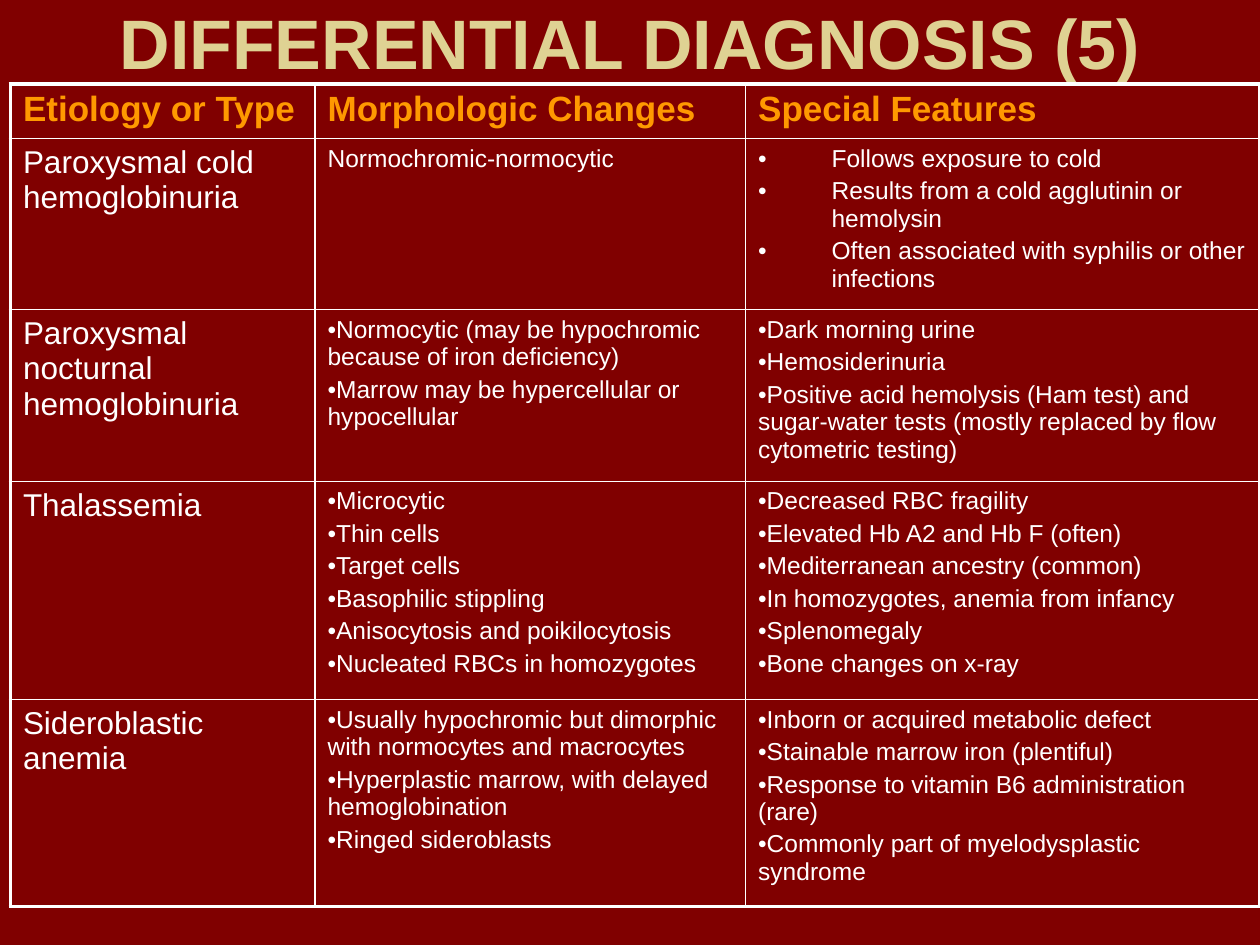
"""Build the differential diagnosis slide with its table of anemia types."""
from dataclasses import dataclass

from lxml.etree import SubElement
from pptx import Presentation
from pptx.dml.color import RGBColor as Color
from pptx.enum.text import MSO_ANCHOR as Anchor, PP_ALIGN as Align
from pptx.oxml import parse_xml
from pptx.oxml.ns import nsdecls, qn
from pptx.util import Cm, Pt


@dataclass(frozen=True)
class Theme:
    """Hold the colours, font, type sizes and line widths."""
    background: str = "800000"
    title: str = "DFD293"
    header: str = "FF9900"
    body: str = "FFFFFF"
    font: str = "Arial"
    title_size: int = 40
    header_size: int = 20
    type_size: int = 18
    detail_size: int = 14
    inner_line: float = 1
    outer_line: float = 2.25


THEME = Theme()
TITLE = "DIFFERENTIAL DIAGNOSIS (5)"
HEADERS = ["Etiology or Type", "Morphologic Changes", "Special Features"]
COLUMN_WIDTHS = [6.14, 8.68, 10.37]
ROW_HEIGHTS = [1.09, 3.45, 3.46, 4.4, 4.17]
HANGING_INDENT = 1.48
DISEASES = [
    ("Paroxysmal cold hemoglobinuria",
     ["Normochromic-normocytic"],
     ["Follows exposure to cold",
      "Results from a cold agglutinin or hemolysin",
      "Often associated with syphilis or other infections"]),
    ("Paroxysmal nocturnal hemoglobinuria",
     ["Normocytic (may be hypochromic because of iron deficiency)",
      "Marrow may be hypercellular or hypocellular"],
     ["Dark morning urine",
      "Hemosiderinuria",
      "Positive acid hemolysis (Ham test) and sugar-water tests "
      "(mostly replaced by flow cytometric testing)"]),
    ("Thalassemia",
     ["Microcytic", "Thin cells", "Target cells", "Basophilic stippling",
      "Anisocytosis and poikilocytosis", "Nucleated RBCs in homozygotes"],
     ["Decreased RBC fragility",
      "Elevated Hb A2 and Hb F (often)",
      "Mediterranean ancestry (common)",
      "In homozygotes, anemia from infancy",
      "Splenomegaly",
      "Bone changes on x-ray"]),
    ("Sideroblastic anemia",
     ["Usually hypochromic but dimorphic with normocytes and macrocytes",
      "Hyperplastic marrow, with delayed hemoglobination",
      "Ringed sideroblasts"],
     ["Inborn or acquired metabolic defect",
      "Stainable marrow iron (plentiful)",
      "Response to vitamin B6 administration (rare)",
      "Commonly part of myelodysplastic syndrome"]),
]


def format_runs(para, size, color, bold=False):
    """Apply the theme font to every run of a paragraph."""
    for span in para.runs:
        span.font.name = THEME.font
        span.font.size = Pt(size)
        span.font.bold = bold
        span.font.color.rgb = Color.from_string(color)


def add_title(page):
    """Add the centred slide title."""
    box = page.shapes.add_textbox(Cm(1.27), Cm(0), Cm(22.86), Cm(1.67))
    frame = box.text_frame
    frame.word_wrap = True
    frame.vertical_anchor = Anchor.MIDDLE
    frame.text = TITLE
    para = frame.paragraphs[0]
    para.alignment = Align.CENTER
    format_runs(para, THEME.title_size, THEME.title, bold=True)


def add_bullet(para, indent):
    """Give a paragraph a bullet in the theme font with a hanging indent."""
    properties = para._p.get_or_add_pPr()
    properties.set("marL", str(Cm(indent)))
    properties.set("indent", str(-Cm(indent)))
    SubElement(properties, qn("a:buFont")).set("typeface", THEME.font)
    SubElement(properties, qn("a:buChar")).set("char", "•")


def fill_cell(cell, lines, size, color, bold=False, bulleted=False, indent=0):
    """Write the lines of a cell as paragraphs."""
    cell.fill.background()
    cell.text_frame.text = "\n".join(lines)
    for para in cell.text_frame.paragraphs:
        para.space_before = Pt(size * 0.2)
        format_runs(para, size, color, bold)
        if bulleted:
            add_bullet(para, indent)


def set_borders(cell, outer_sides):
    """Draw the four borders of a cell, heavier on the outer sides."""
    properties = cell._tc.get_or_add_tcPr()
    for position, side in enumerate("LRTB"):
        width = THEME.outer_line if side in outer_sides else THEME.inner_line
        properties.insert(position, parse_xml(
            f'<a:ln{side} {nsdecls("a")} w="{Pt(width)}"><a:solidFill>'
            f'<a:srgbClr val="{THEME.body}"/></a:solidFill></a:ln{side}>'))


def add_disease_table(page):
    """Add the table with one row per disease."""
    table = page.shapes.add_table(
        len(ROW_HEIGHTS), len(COLUMN_WIDTHS), Cm(0.21), Cm(1.69),
        Cm(sum(COLUMN_WIDTHS)), Cm(sum(ROW_HEIGHTS))).table
    table.first_row = table.horz_banding = False
    for column, width in zip(table.columns, COLUMN_WIDTHS):
        column.width = Cm(width)
    for row, height in zip(table.rows, ROW_HEIGHTS):
        row.height = Cm(height)

    for column, header in enumerate(HEADERS):
        fill_cell(table.cell(0, column), [header], THEME.header_size,
                  THEME.header, bold=True)
    for row, (name, *details) in enumerate(DISEASES, start=1):
        fill_cell(table.cell(row, 0), [name], THEME.type_size, THEME.body)
        for column, lines in enumerate(details, start=1):
            fill_cell(table.cell(row, column), lines, THEME.detail_size,
                      THEME.body, bulleted=len(lines) > 1,
                      indent=HANGING_INDENT if row == 1 else 0)

    last_row, last_column = len(ROW_HEIGHTS) - 1, len(COLUMN_WIDTHS) - 1
    for row in range(last_row + 1):
        for column in range(last_column + 1):
            edges = {"L": column == 0, "R": column == last_column,
                     "T": row == 0, "B": row == last_row}
            set_borders(table.cell(row, column),
                        [side for side, outer in edges.items() if outer])


def main():
    """Create the deck and save it."""
    deck = Presentation()
    deck.slide_width, deck.slide_height = Cm(25.4), Cm(19.05)
    page = deck.slides.add_slide(deck.slide_layouts[6])
    page.background.fill.solid()
    page.background.fill.fore_color.rgb = Color.from_string(THEME.background)
    add_title(page)
    add_disease_table(page)
    deck.save("out.pptx")


if __name__ == "__main__":
    main()
